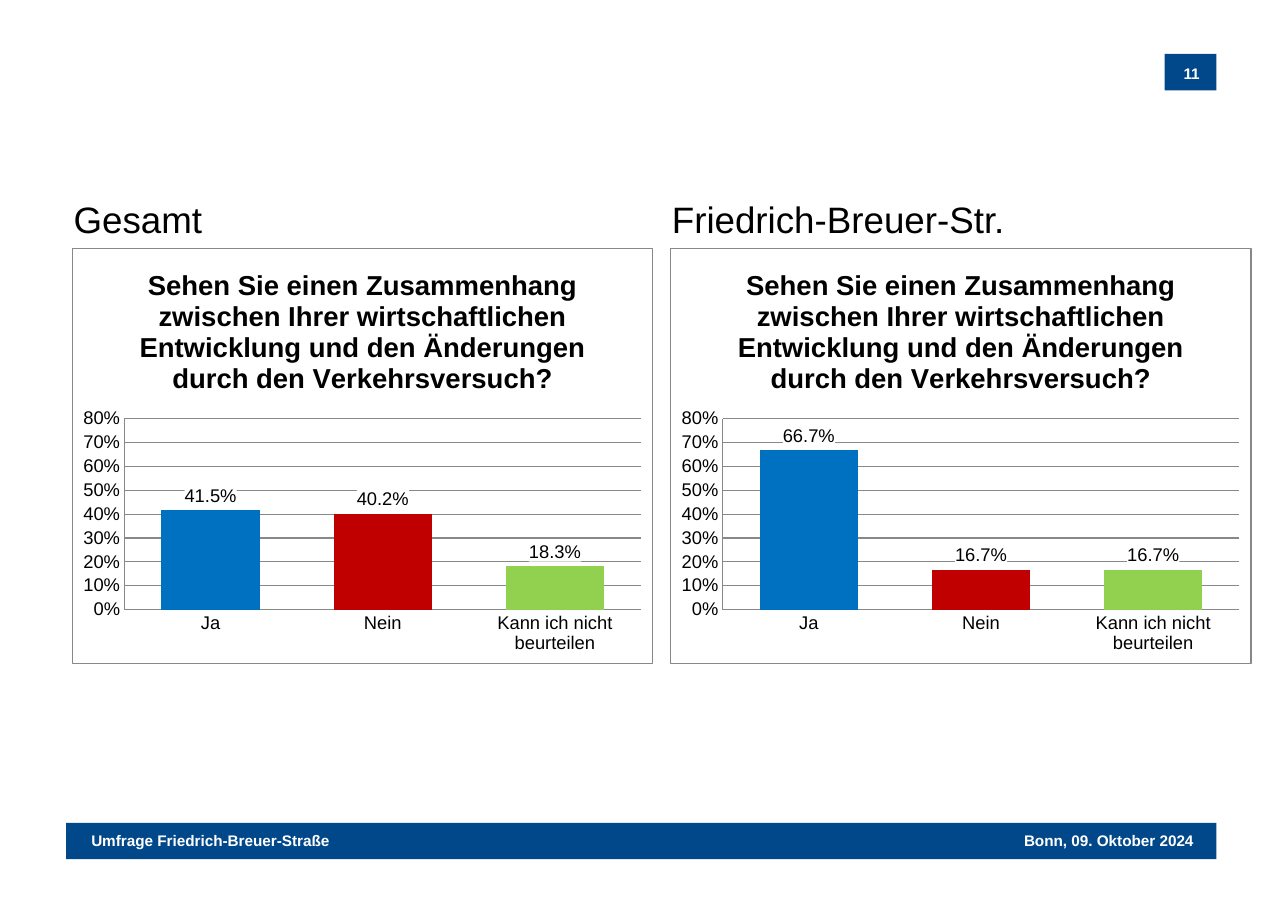
import pptx
import pptx.chart.data
import pptx.dml.color
import pptx.enum.chart
import pptx.enum.text
import pptx.oxml
import pptx.util
from pptx.util import Inches

FONT = "Arial"
BLACK, WHITE, BLUE, GREY = "000000", "FFFFFF", "01488A", "888888"
BAR_COLOURS = ["0070C0", "C00000", "92D050"]
CATEGORIES = ["Ja", "Nein", "Kann ich nicht beurteilen"]
QUESTION = (
    "Sehen Sie einen Zusammenhang zwischen Ihrer wirtschaftlichen "
    "Entwicklung und den Änderungen durch den Verkehrsversuch?"
)
PANELS = [
    ("Gesamt", [0.415, 0.402, 0.183]),
    ("Friedrich-Breuer-Str.", [0.667, 0.167, 0.167]),
]
PANEL_LEFT, PANEL_STEP = 0.65, 5.43
ALIGN = pptx.enum.text.PP_ALIGN


def rgb(colour):
    """Turn a hex string into a colour."""
    return pptx.dml.color.RGBColor.from_string(colour)


def set_font(font, size, colour=BLACK, bold=False):
    """Format a font."""
    font.name, font.size, font.bold = FONT, pptx.util.Pt(size), bold
    font.color.rgb = rgb(colour)


def set_line(line):
    """Give a chart line its grey hairline format."""
    line.color.rgb = rgb(GREY)
    line.width = pptx.util.Pt(0.75)


def chart_xml(tag, content):
    """Build a chart element from its tag and inner XML."""
    ns = pptx.oxml.ns.nsdecls("c", "a")
    return pptx.oxml.parse_xml(f"<c:{tag} {ns}>{content}</c:{tag}>")


def solid(colour):
    """Return the XML of a solid fill."""
    return f'<a:solidFill><a:srgbClr val="{colour}"/></a:solidFill>'


def add_bar(s, left, top, width, height):
    """Add a plain blue rectangle."""
    sp = s.shapes.add_shape(
        pptx.enum.shapes.MSO_SHAPE.RECTANGLE,
        Inches(left), Inches(top), Inches(width), Inches(height),
    )
    sp.shadow.inherit = False
    sp.fill.solid()
    sp.fill.fore_color.rgb = rgb(BLUE)
    sp.line.fill.background()


def add_text(s, text, box, size, colour=BLACK, bold=False, align=ALIGN.LEFT, wrap=True):
    """Add a one-line text box."""
    tf = s.shapes.add_textbox(*map(Inches, box)).text_frame
    tf.word_wrap = wrap
    p = tf.paragraphs[0]
    p.alignment = align
    r = p.add_run()
    r.text = text
    set_font(r.font, size, colour, bold)


def frame_chart(chart):
    """Give the chart a bordered white area and a fixed plot position."""
    space = chart._chartSpace
    border = f'<a:ln w="9525">{solid(GREY)}</a:ln>'
    space.chart.addnext(chart_xml("spPr", solid(WHITE) + border))
    plot_area = space.chart.plotArea
    for layout in plot_area.findall(pptx.oxml.ns.qn("c:layout")):
        plot_area.remove(layout)
    settings = [
        ("layoutTarget", "inner"), ("xMode", "edge"), ("yMode", "edge"),
        ("x", 0.09), ("y", 0.41), ("w", 0.89), ("h", 0.46),
    ]
    content = "".join(f'<c:{tag} val="{val}"/>' for tag, val in settings)
    plot_area.insert(0, chart_xml("layout", f"<c:manualLayout>{content}</c:manualLayout>"))


def format_axes(chart):
    """Format both axes and the gridlines."""
    for axis in (chart.category_axis, chart.value_axis):
        axis.major_tick_mark = pptx.enum.chart.XL_TICK_MARK.NONE
        set_font(axis.tick_labels.font, 12)
        set_line(axis.format.line)
    axis = chart.value_axis
    axis.minimum_scale, axis.maximum_scale, axis.major_unit = 0, 0.8, 0.1
    axis.tick_labels.number_format = "0%"
    axis.tick_labels.number_format_is_linked = False
    set_line(axis.major_gridlines.format.line)


def format_bars(plot):
    """Colour the bars and label them with their values."""
    plot.gap_width = 75
    plot.vary_by_categories = False
    series = plot.series[0]
    for i, colour in enumerate(BAR_COLOURS):
        fill = series.points[i].format.fill
        fill.solid()
        fill.fore_color.rgb = rgb(colour)
    labels = series.data_labels
    labels.show_value = True
    labels.number_format = "0.0%"
    labels.number_format_is_linked = False
    labels.position = pptx.enum.chart.XL_LABEL_POSITION.OUTSIDE_END
    set_font(labels.font, 12)
    number_format = labels._element.find(pptx.oxml.ns.qn("c:numFmt"))
    number_format.addnext(chart_xml("spPr", solid(WHITE)))


def add_survey_chart(s, left, values):
    """Add a column chart with the answers to the question."""
    data = pptx.chart.data.CategoryChartData(number_format="0.0%")
    data.categories = CATEGORIES
    data.add_series("Series 1", values)
    chart = s.shapes.add_chart(
        pptx.enum.chart.XL_CHART_TYPE.COLUMN_CLUSTERED,
        Inches(left), Inches(2.25), Inches(5.28), Inches(3.78), data,
    ).chart
    set_font(chart.font, 10)
    chart.has_legend = False
    r = chart.chart_title.text_frame.paragraphs[0].add_run()
    r.text = QUESTION
    set_font(r.font, 18, bold=True)
    chart.chart_title.include_in_layout = False
    format_axes(chart)
    format_bars(chart.plots[0])
    frame_chart(chart)


def main():
    """Build the slide and save it."""
    prs = pptx.Presentation()
    prs.slide_width, prs.slide_height = Inches(11.69), Inches(8.27)
    s = prs.slides.add_slide(prs.slide_layouts[6])
    add_bar(s, 10.57, 0.49, 0.47, 0.33)
    add_bar(s, 0.6, 7.47, 10.44, 0.33)
    add_text(s, "Umfrage Friedrich-Breuer-Straße", (0.73, 7.5, 2.39, 0.27),
             10, WHITE, True, wrap=False)
    add_text(s, "Bonn, 09. Oktober 2024", (9.18, 7.5, 1.75, 0.27),
             10, WHITE, True, ALIGN.RIGHT, wrap=False)
    add_text(s, "11", (10.56, 0.53, 0.51, 0.27), 10, WHITE, True, ALIGN.CENTER)
    for i, (heading, values) in enumerate(PANELS):
        left = PANEL_LEFT + i * PANEL_STEP
        add_survey_chart(s, left, values)
        add_text(s, heading, (left - 0.08, 1.74, 3.54, 0.5), 24)
    prs.save("out.pptx")


if __name__ == "__main__":
    main()
